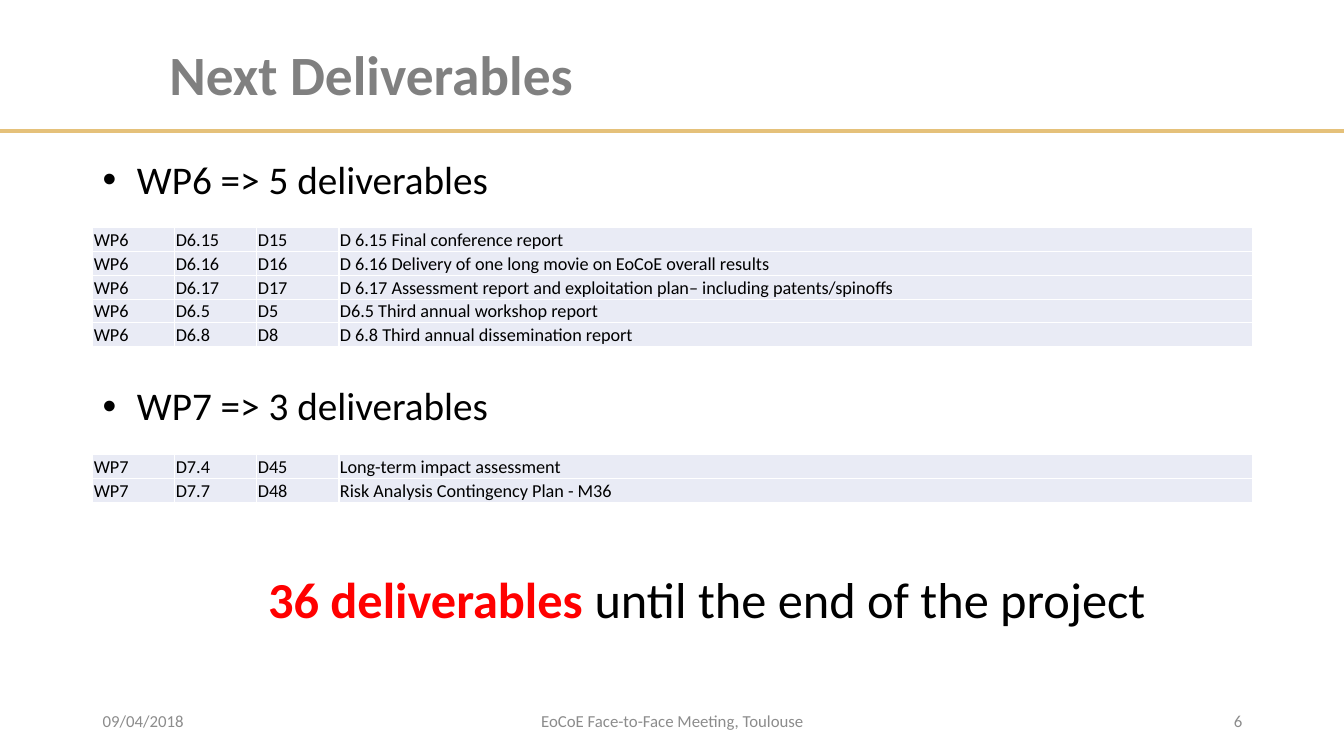
from lxml import etree
from pptx import Presentation
from pptx.dml.color import RGBColor
from pptx.enum.shapes import MSO_CONNECTOR
from pptx.enum.text import MSO_ANCHOR as ANCHOR, MSO_AUTO_SIZE as AUTO_SIZE, PP_ALIGN as ALIGN
from pptx.oxml.ns import qn
from pptx.util import Inches, Pt

BLACK = RGBColor(0x00, 0x00, 0x00)
RED = RGBColor(0xFF, 0x00, 0x00)
TITLE_GRAY = RGBColor(0x80, 0x80, 0x80)
FOOTER_GRAY = RGBColor(0x8C, 0x8C, 0x8C)
GOLD = RGBColor(0xE5, 0xC1, 0x7A)
CELL_FILL = RGBColor(0xE9, 0xEB, 0xF5)
BORDER_HEX = "FFFFFF"

SLIDE_WIDTH, SLIDE_HEIGHT = 13.33, 7.5
MARGIN, CONTENT_WIDTH = 0.92, 11.5
CODE_WIDTH, ROW_HEIGHT = 0.814, 0.236
SECTION_TOP, SECTION_STEP, TABLE_OFFSET = 1.54, 2.25, 0.72

SECTIONS = [
    ("WP6 => 5 deliverables", [
        ("WP6", "D6.15", "D15", "D 6.15 Final conference report"),
        ("WP6", "D6.16", "D16", "D 6.16 Delivery of one long movie on EoCoE overall results"),
        ("WP6", "D6.17", "D17",
         "D 6.17 Assessment report and exploitation plan– including patents/spinoffs"),
        ("WP6", "D6.5", "D5", "D6.5 Third annual workshop report"),
        ("WP6", "D6.8", "D8", "D 6.8 Third annual dissemination report"),
    ]),
    ("WP7 => 3 deliverables", [
        ("WP7", "D7.4", "D45", "Long-term impact assessment"),
        ("WP7", "D7.7", "D48", "Risk Analysis Contingency Plan - M36"),
    ]),
]
FOOTERS = [
    ("09/04/2018", MARGIN, 3, ALIGN.LEFT),
    ("EoCoE Face-to-Face Meeting, Toulouse", 4.42, 4.5, ALIGN.CENTER),
    ("6", 9.42, 3, ALIGN.RIGHT),
]


def set_attributes(target, values):
    for name, value in values.items():
        setattr(target, name, value)


def add_run(paragraph, text, size, color, bold=False):
    run = paragraph.add_run()
    run.text = text
    set_attributes(run.font, {"name": "Calibri", "size": Pt(size), "bold": bold})
    run.font.color.rgb = color


def add_text_box(slide, left, top, width, height, **frame_format):
    """Add an empty wrapping text box and return its first paragraph."""
    box = slide.shapes.add_textbox(Inches(left), Inches(top), Inches(width), Inches(height))
    set_attributes(box.text_frame, {"word_wrap": True, **frame_format})
    return box.text_frame.paragraphs[0]


def add_header(slide):
    rule = slide.shapes.add_connector(
        MSO_CONNECTOR.STRAIGHT, 0, Inches(1.3), Inches(SLIDE_WIDTH), Inches(1.3))
    rule.line.color.rgb = GOLD
    rule.line.width = Pt(2.25)
    etree.SubElement(rule._element.spPr, qn("a:effectLst"))

    title = slide.shapes.title
    set_attributes(title, {"left": Inches(1.58), "top": Inches(0.4),
                           "width": Inches(10.83), "height": Inches(0.73)})
    set_attributes(title.text_frame, {"vertical_anchor": ANCHOR.MIDDLE,
                                      "auto_size": AUTO_SIZE.NONE})
    paragraph = title.text_frame.paragraphs[0]
    set_attributes(paragraph, {"alignment": ALIGN.LEFT, "line_spacing": 0.9})
    add_run(paragraph, "Next Deliverables", 39.6, TITLE_GRAY, bold=True)


def add_bullet(paragraph, indent):
    properties = paragraph._p.get_or_add_pPr()
    properties.set("marL", str(Inches(indent)))
    properties.set("indent", str(-Inches(indent)))
    etree.SubElement(properties, qn("a:buFont"), typeface="Arial")
    etree.SubElement(properties, qn("a:buChar"), char="•")


def add_borders(cell):
    """Put white borders before the fill, as the schema orders them."""
    properties = cell._tc.get_or_add_tcPr()
    for position, side in enumerate(("lnL", "lnR", "lnT", "lnB")):
        line = etree.Element(qn(f"a:{side}"), w=str(Pt(1)))
        fill = etree.SubElement(line, qn("a:solidFill"))
        etree.SubElement(fill, qn("a:srgbClr"), val=BORDER_HEX)
        properties.insert(position, line)


def add_deliverables_table(slide, left, top, width, rows):
    columns = len(rows[0])
    frame = slide.shapes.add_table(len(rows), columns, Inches(left), Inches(top),
                                   Inches(width), Inches(ROW_HEIGHT * len(rows)))
    table = frame.table
    set_attributes(table, {"first_row": False, "horz_banding": False})
    code_columns = columns - 1
    widths = [CODE_WIDTH] * code_columns + [width - CODE_WIDTH * code_columns]
    for column, column_width in zip(table.columns, widths):
        column.width = Inches(column_width)
    for row_index, row in enumerate(rows):
        table.rows[row_index].height = Inches(ROW_HEIGHT)
        for column_index, text in enumerate(row):
            cell = table.cell(row_index, column_index)
            set_attributes(cell, {
                "margin_left": Inches(0.01), "margin_right": Inches(0.01),
                "margin_top": Inches(0.01), "margin_bottom": 0,
                "vertical_anchor": ANCHOR.BOTTOM})
            cell.fill.solid()
            cell.fill.fore_color.rgb = CELL_FILL
            add_borders(cell)
            add_run(cell.text_frame.paragraphs[0], text, 13, BLACK)


def add_section(slide, left, top, width, heading, rows):
    paragraph = add_text_box(slide, left, top, width, 0.55)
    paragraph.line_spacing = 0.9
    add_bullet(paragraph, 0.34)
    add_run(paragraph, heading, 28, BLACK)
    add_deliverables_table(slide, left, top + TABLE_OFFSET, width, rows)


def add_summary(slide, left, top, width, height):
    paragraph = add_text_box(slide, left, top, width, height, word_wrap=False)
    add_run(paragraph, "36 deliverables ", 36, RED, bold=True)
    add_run(paragraph, "until the end of the project", 36, BLACK)


def add_footers(slide, top, height):
    for text, left, width, alignment in FOOTERS:
        paragraph = add_text_box(slide, left, top, width, height,
                                 vertical_anchor=ANCHOR.MIDDLE)
        paragraph.alignment = alignment
        add_run(paragraph, text, 12, FOOTER_GRAY)


def main():
    presentation = Presentation()
    presentation.slide_width = Inches(SLIDE_WIDTH)
    presentation.slide_height = Inches(SLIDE_HEIGHT)
    slide = presentation.slides.add_slide(presentation.slide_layouts.get_by_name("Title Only"))
    add_header(slide)
    for index, (heading, rows) in enumerate(SECTIONS):
        add_section(slide, MARGIN, SECTION_TOP + index * SECTION_STEP,
                    CONTENT_WIDTH, heading, rows)
    add_summary(slide, 2.56, 5.59, 8.99, 0.71)
    add_footers(slide, 6.95, 0.4)
    presentation.save("out.pptx")


if __name__ == "__main__":
    main()
